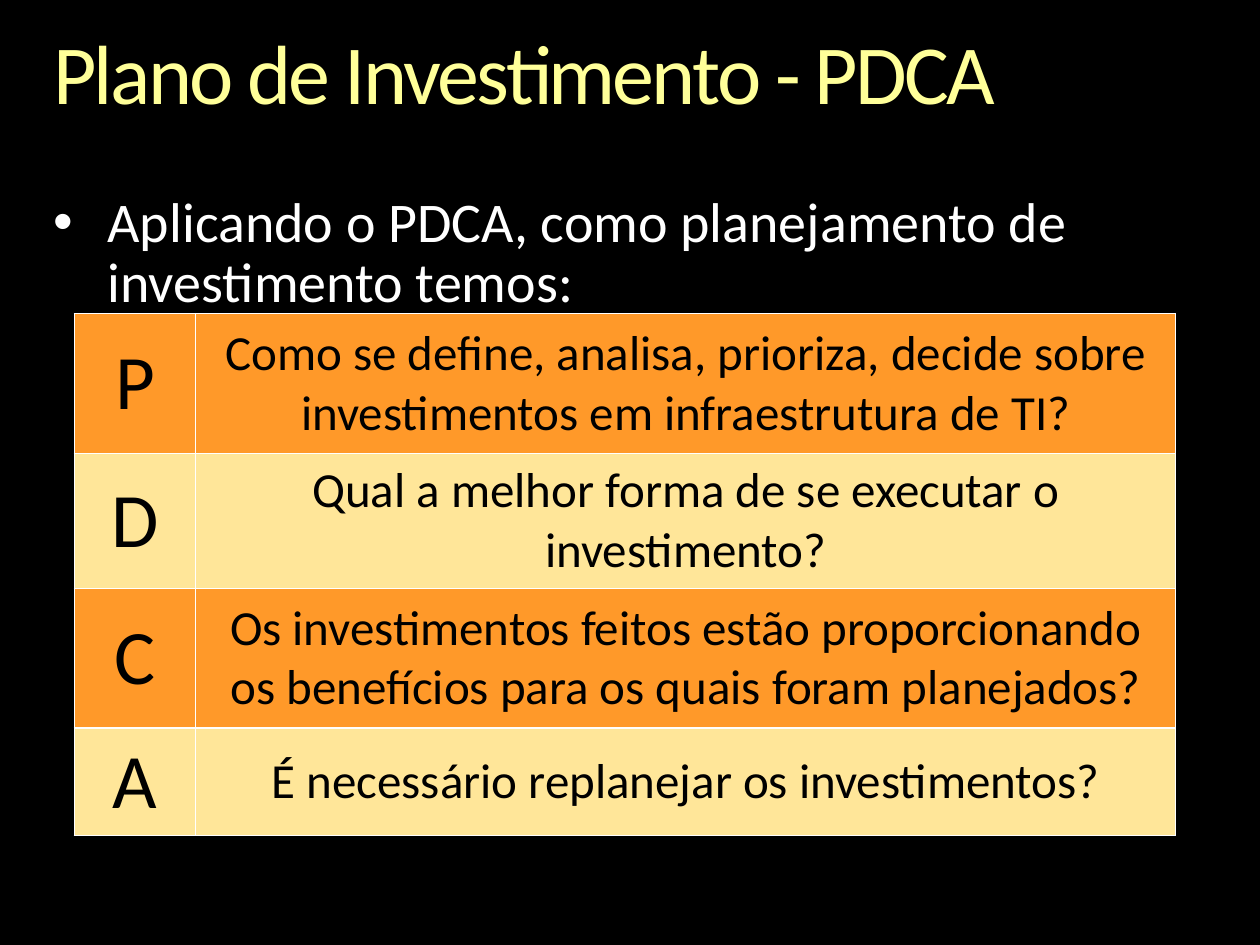
import dataclasses

import lxml.etree
import pptx
import pptx.dml.color
import pptx.enum.text
import pptx.oxml.ns
import pptx.util

Cm = pptx.util.Cm
Pt = pptx.util.Pt
qn = pptx.oxml.ns.qn


@dataclasses.dataclass(frozen=True)
class Theme:
    font: str = "Calibri"
    background: str = "000000"
    title: str = "FFFF99"
    body: str = "FFFFFF"
    table_text: str = "000000"
    border: str = "FFFFFF"
    bands: tuple = ("FF9929", "FFE699")
    title_size: int = 48
    body_size: int = 32
    letter_size: int = 44
    question_size: int = 28


THEME = Theme()

STAGES = [
    ("P", "Como se define, analisa, prioriza, decide sobre investimentos em infraestrutura de TI?", 2.82),
    ("D", "Qual a melhor forma de se executar o investimento?", 2.72),
    ("C", "Os investimentos feitos estão proporcionando os benefícios para os quais foram planejados?", 2.82),
    ("A", "É necessário replanejar os investimentos?", 2.16),
]


def rgb(value):
    return pptx.dml.color.RGBColor.from_string(value)


def write(frame, text, *, size, color, align=pptx.enum.text.PP_ALIGN.LEFT,
          line_spacing=None, tracking=None, bullet=None, hanging=None):
    paragraph = frame.paragraphs[0]
    paragraph.alignment = align
    if line_spacing:
        paragraph.line_spacing = line_spacing
    if bullet:
        properties = paragraph._p.get_or_add_pPr()
        properties.set("marL", str(hanging))
        properties.set("indent", str(-hanging))
        lxml.etree.SubElement(properties, qn("a:buFont"), typeface="Arial")
        lxml.etree.SubElement(properties, qn("a:buChar"), char=bullet)
    run = paragraph.add_run()
    run.text = text
    run.font.name = THEME.font
    run.font.size = Pt(size)
    run.font.bold = False
    run.font.color.rgb = rgb(color)
    if tracking:
        run._r.get_or_add_rPr().set("spc", str(round(tracking * 100)))


def add_text(slide, text, left, top, width, height, **style):
    frame = slide.shapes.add_textbox(Cm(left), Cm(top), Cm(width), Cm(height)).text_frame
    frame.word_wrap = True
    frame.margin_left = frame.margin_right = frame.margin_top = frame.margin_bottom = 0
    write(frame, text, **style)


def outline_cell(cell):
    properties = cell._tc.get_or_add_tcPr()
    for side in ("a:lnL", "a:lnR", "a:lnT", "a:lnB"):
        edge = lxml.etree.SubElement(properties, qn(side), w=str(Pt(1)))
        fill = lxml.etree.SubElement(edge, qn("a:solidFill"))
        lxml.etree.SubElement(fill, qn("a:srgbClr"), val=THEME.border)


def fill_cell(cell, text, size, band):
    outline_cell(cell)
    cell.fill.solid()
    cell.fill.fore_color.rgb = rgb(band)
    cell.vertical_anchor = pptx.enum.text.MSO_ANCHOR.MIDDLE
    write(cell.text_frame, text, size=size, color=THEME.table_text,
          align=pptx.enum.text.PP_ALIGN.CENTER)


def add_stages(slide, left, top, widths):
    height = sum(stage[2] for stage in STAGES)
    table = slide.shapes.add_table(len(STAGES), len(widths), Cm(left), Cm(top),
                                   Cm(sum(widths)), Cm(height)).table
    table.first_row = table.horz_banding = False
    for column, width in zip(table.columns, widths):
        column.width = Cm(width)
    for index, (letter, question, row_height) in enumerate(STAGES):
        table.rows[index].height = Cm(row_height)
        band = THEME.bands[index % len(THEME.bands)]
        fill_cell(table.cell(index, 0), letter, THEME.letter_size, band)
        fill_cell(table.cell(index, 1), question, THEME.question_size, band)


def main():
    deck = pptx.Presentation()
    deck.slide_width, deck.slide_height = Cm(25.4), Cm(19.05)
    slide = deck.slides.add_slide(deck.slide_layouts[6])
    slide.background.fill.solid()
    slide.background.fill.fore_color.rgb = rgb(THEME.background)

    add_text(slide, "Plano de Investimento - PDCA", 1.07, 0.64, 23.29, 1.85,
             size=THEME.title_size, color=THEME.title, line_spacing=0.9, tracking=-1.5)
    add_text(slide, "Aplicando o PDCA, como planejamento de investimento temos:",
             1.07, 3.91, 24.05, 2.46, size=THEME.body_size, color=THEME.body,
             line_spacing=0.9, bullet="•", hanging=Cm(1.1))
    add_stages(slide, 1.5, 6.32, (2.44, 19.76))
    deck.save("out.pptx")


if __name__ == "__main__":
    main()
